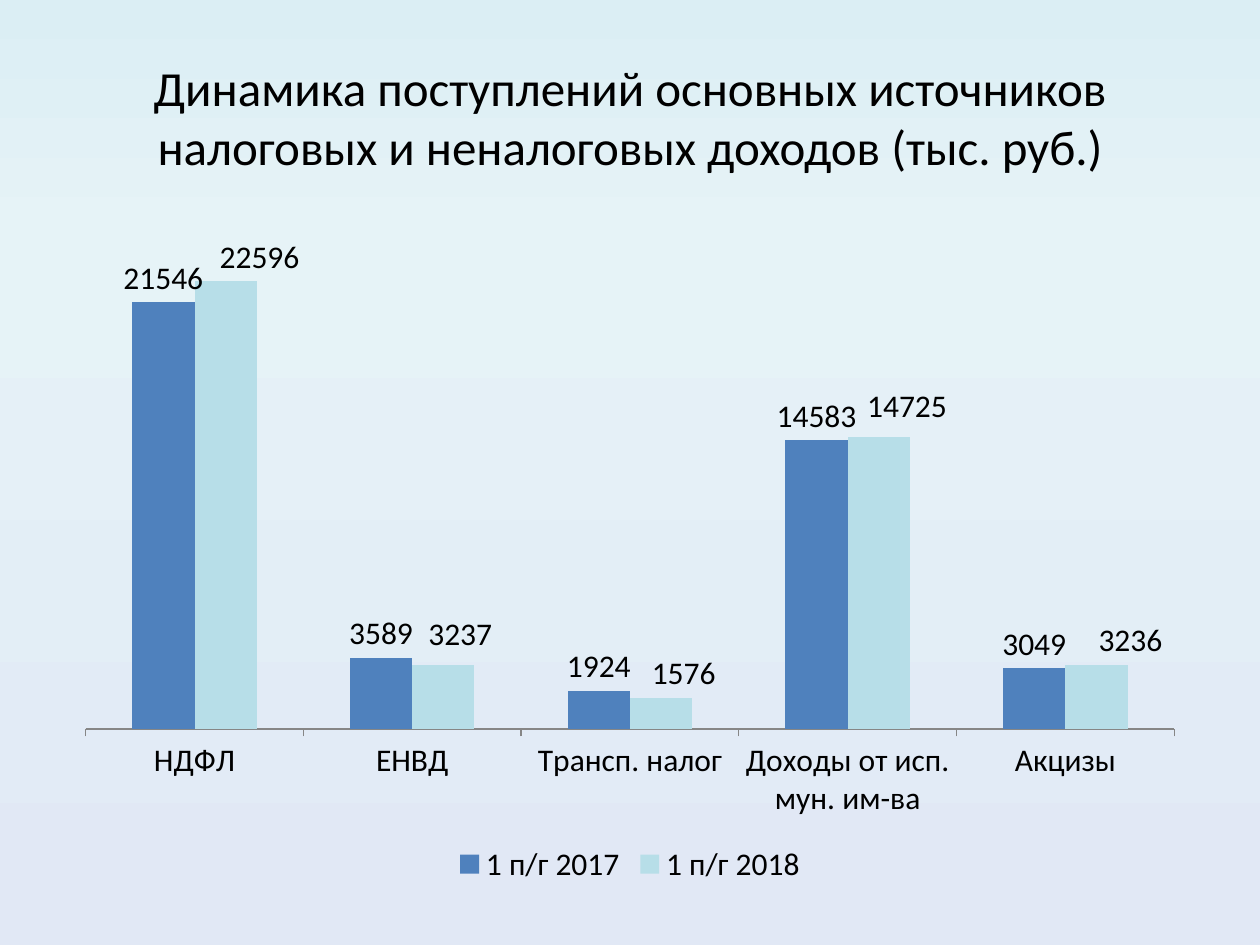
import copy
import pptx
import pptx.chart.data
import pptx.dml.color
import pptx.enum.chart
import pptx.enum.text
import pptx.oxml
import pptx.oxml.ns
import pptx.util

Inches, Pt = pptx.util.Inches, pptx.util.Pt
enum = pptx.enum.chart

# Content
TITLE = "Динамика поступлений основных источников налоговых и неналоговых доходов (тыс. руб.)"
CATS = ["НДФЛ", "ЕНВД", "Трансп. налог", "Доходы от исп. мун. им-ва", "Акцизы"]
SERIES = [
    ("1 п/г 2017", [21546, 3589, 1924, 14583, 3049], "blue"),
    ("1 п/г 2018", [22596, 3237, 1576, 14725, 3236], "aqua"),
]
# Label shifts of the second series, as shares of the chart size
SHIFTS = [(0.03, 0), (0.015, -0.01), (0.02, 0), (0.025, -0.01), (0.03, 0)]
PLOT = {"x": 0.02, "y": 0.02, "w": 0.96, "h": 0.74}
COLORS = {"blue": "4F81BD", "aqua": "B7DEE8", "text": "000000", "axis": "868686"}
STOPS = [(0, "DBEEF4"), (0.25, "E6F3F7"), (1, "E1E8F5")]
FONT = "Calibri"


def rgb(code):
    return pptx.dml.color.RGBColor.from_string(code)


def style(font, size):
    font.name, font.size = FONT, Pt(size)
    font.color.rgb = rgb(COLORS["text"])


def layout(spots, inner=False):
    """Make a c:layout element from a dict of x, y, w, h."""
    parts = '<c:layoutTarget val="inner"/>' if inner else ""
    if inner:
        parts += '<c:xMode val="edge"/><c:yMode val="edge"/>'
    parts += "".join(f'<c:{key} val="{val}"/>' for key, val in spots.items())
    space = pptx.oxml.ns.nsdecls("c")
    return pptx.oxml.parse_xml(
        f"<c:layout {space}><c:manualLayout>{parts}</c:manualLayout></c:layout>")


deck = pptx.Presentation()
deck.slide_width, deck.slide_height = Inches(10), Inches(7.5)
slide = deck.slides.add_slide(deck.slide_layouts[6])

# Background, top to bottom
fill = slide.background.fill
fill.gradient()
fill.gradient_angle = 270
last = slide.element.xpath(".//a:gs")[-1]
last.addnext(copy.deepcopy(last))
for stop, (pos, code) in zip(fill.gradient_stops, STOPS):
    stop.position = pos
    stop.color.rgb = rgb(code)

# Title
box = slide.shapes.add_textbox(Inches(0.5), Inches(0.3), Inches(9), Inches(1.25))
frame = box.text_frame
frame.word_wrap = True
frame.vertical_anchor = pptx.enum.text.MSO_ANCHOR.MIDDLE
para = frame.paragraphs[0]
para.text = TITLE
para.alignment = pptx.enum.text.PP_ALIGN.CENTER
style(para.font, 28)

# Chart
data = pptx.chart.data.CategoryChartData()
data.categories = CATS
for name, vals, _ in SERIES:
    data.add_series(name, vals)
chart = slide.shapes.add_chart(
    enum.XL_CHART_TYPE.COLUMN_CLUSTERED,
    Inches(0.5), Inches(1.75), Inches(9), Inches(5.31), data).chart
style(chart.font, 18)
chart.has_title = False
chart.has_legend = True
chart.legend.position = enum.XL_LEGEND_POSITION.BOTTOM
chart.legend.include_in_layout = False

# Axes and plot area
axis = chart.value_axis
axis.visible = False
axis.has_major_gridlines = False
axis.minimum_scale, axis.maximum_scale = 0, 25000
base = chart.category_axis
base.major_tick_mark = enum.XL_TICK_MARK.OUTSIDE
base.format.line.color.rgb = rgb(COLORS["axis"])
area = chart.element.xpath(".//c:plotArea")[0]
for old in area.xpath("./c:layout"):
    area.remove(old)
area.insert(0, layout(PLOT, inner=True))

# Bars and labels
plot = chart.plots[0]
plot.gap_width, plot.overlap = 150, 0
plot.vary_by_categories = False
for bars, (_, _, hue) in zip(plot.series, SERIES):
    bars.format.fill.solid()
    bars.format.fill.fore_color.rgb = rgb(COLORS[hue])
    labels = bars.data_labels
    labels.show_value = True
    labels.position = enum.XL_LABEL_POSITION.OUTSIDE_END
    style(labels.font, 18)

moved = plot.series[1]
for num, (dx, dy) in enumerate(SHIFTS):
    label = moved.points[num].data_label
    label.position = enum.XL_LABEL_POSITION.OUTSIDE_END
    style(label.font, 18)
    mark = moved.data_labels._element.xpath(f"./c:dLbl/c:idx[@val='{num}']")[0]
    mark.addnext(layout({"x": dx, "y": dy}))

deck.save("out.pptx")
